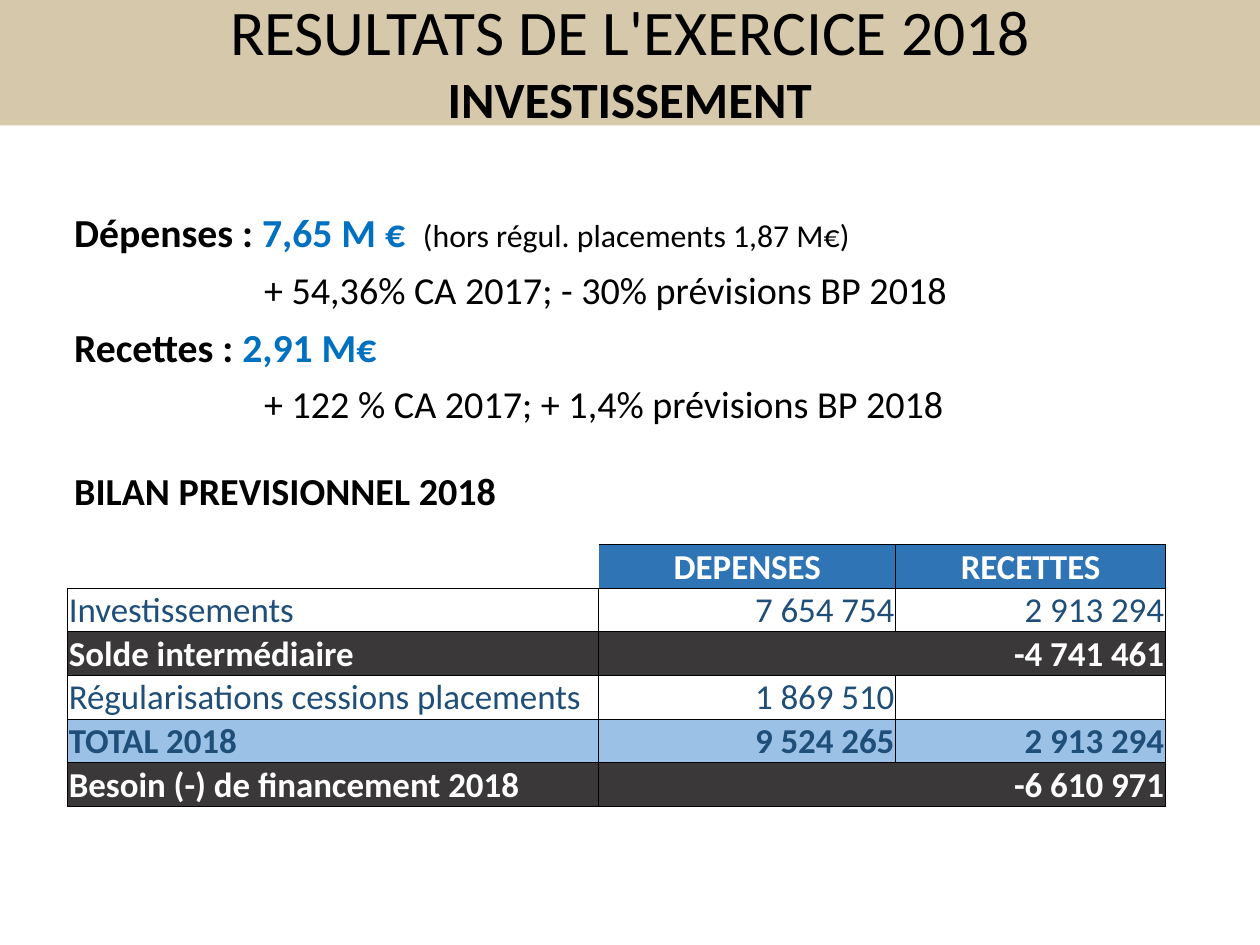
from lxml import etree
from pptx import Presentation
from pptx.dml.color import RGBColor
from pptx.enum import shapes, text
from pptx.oxml import ns
from pptx.util import Cm, Pt

BLACK, WHITE, SAND = "000000", "FFFFFF", "D6C8AB"
ACCENT, HEADER, NAVY = "0070C0", "2F75B5", "1F4E78"
DARK, LIGHT_BLUE = "3A3838", "9BC2E6"
LEFT, CENTER, RIGHT = text.PP_ALIGN.LEFT, text.PP_ALIGN.CENTER, text.PP_ALIGN.RIGHT


def color(hex_value):
    return RGBColor.from_string(hex_value)


def style(run, size, hex_value=BLACK, bold=False):
    run.font.name = "Calibri"
    run.font.size = Pt(size)
    run.font.bold = bold
    run.font.color.rgb = color(hex_value)


def add_run(paragraph, words, *formatting):
    run = paragraph.add_run()
    run.text = words
    style(run, *formatting)


def add_title(slide, left, top, width, height):
    # Banner behind the title
    title = slide.shapes.title
    banner = slide.shapes.add_shape(shapes.MSO_SHAPE.RECTANGLE, left, top, width, height)
    banner.shadow.inherit = False
    banner.fill.solid()
    banner.fill.fore_color.rgb = color(SAND)
    banner.line.fill.background()
    title.element.addprevious(banner.element)

    # Two-line title
    margin = Cm(1.4)
    title.left, title.top = left + margin, top
    title.width, title.height = width - 2 * margin, height - Cm(0.1)
    frame = title.text_frame
    frame.text = "RESULTATS DE L'EXERCICE 2018\vINVESTISSEMENT"
    frame.auto_size = text.MSO_AUTO_SIZE.NONE
    frame.vertical_anchor = text.MSO_ANCHOR.MIDDLE
    paragraph = frame.paragraphs[0]
    paragraph.alignment = CENTER
    paragraph.line_spacing = 1.0
    heading, subject = paragraph.runs
    style(heading, 40)
    style(subject, 32, BLACK, True)


def add_text_box(slide, left, top, width, height):
    frame = slide.shapes.add_textbox(left, top, width, height).text_frame
    frame.word_wrap = True
    return frame


def add_key_figures(slide, left, top, width, height):
    # Each line: indent in cm, then its runs
    lines = [
        (0, [("Dépenses : ", 25, BLACK, True), ("7,65 M €", 25, ACCENT, True),
             ("\t(hors régul. placements 1,87 M€)", 20)]),
        (4.22, [("+ 54,36% CA 2017; - 30% prévisions BP 2018", 24)]),
        (0, [("Recettes : ", 25, BLACK, True), ("2,91 M€", 25, ACCENT, True)]),
        (4.22, [("+ 122 % CA 2017; + 1,4% prévisions BP 2018", 24)]),
    ]
    frame = add_text_box(slide, left, top, width, height)
    for index, (indent, runs) in enumerate(lines):
        paragraph = frame.add_paragraph() if index else frame.paragraphs[0]
        properties = paragraph._p.get_or_add_pPr()
        properties.set("marL", str(Cm(indent)))
        if index == 0:
            tabs = etree.SubElement(properties, ns.qn("a:tabLst"))
            etree.SubElement(tabs, ns.qn("a:tab"), pos=str(Cm(7.75)), algn="l")
        paragraph.space_before = Pt(6.6 if index else 0)
        for run in runs:
            add_run(paragraph, *run)


def add_section_heading(slide, left, top, width, height):
    frame = add_text_box(slide, left, top, width, height)
    add_run(frame.paragraphs[0], "BILAN PREVISIONNEL 2018", 24, BLACK, True)


def set_borders(cell, visible_sides):
    properties = cell._tc.get_or_add_tcPr()
    for side in "LRTB":
        line = etree.SubElement(properties, ns.qn("a:ln" + side), w=str(Pt(0.5)))
        if side in visible_sides:
            fill = etree.SubElement(line, ns.qn("a:solidFill"))
            etree.SubElement(fill, ns.qn("a:srgbClr"), val=BLACK)
        else:
            etree.SubElement(line, ns.qn("a:noFill"))


def add_balance_table(slide, left, top, width, height):
    # Each row: fill, text colour, bold, cell texts
    rows = [
        (HEADER, WHITE, True, ["", "DEPENSES", "RECETTES"]),
        (WHITE, NAVY, False, ["Investissements", "7 654 754", "2 913 294"]),
        (DARK, WHITE, True, ["Solde intermédiaire", "-4 741 461"]),
        (WHITE, NAVY, False, ["Régularisations cessions placements", "1 869 510", ""]),
        (LIGHT_BLUE, NAVY, True, ["TOTAL 2018", "9 524 265", "2 913 294"]),
        (DARK, WHITE, True, ["Besoin (-) de financement 2018", "-6 610 971"]),
    ]
    table = slide.shapes.add_table(len(rows), 3, left, top, width, height).table
    for column, share in zip(table.columns, (4.65, 2.6, 2.36)):
        column.width = int(width * share / 9.61)
    for r, (fill, ink, bold, texts) in enumerate(rows):
        table.rows[r].height = int(height / len(rows))
        if len(texts) == 2:
            table.cell(r, 1).merge(table.cell(r, 2))
        for c in range(3):
            cell = table.cell(r, c)
            set_borders(cell, {(0, 0): "B", (0, 1): "RTB"}.get((r, c), "LRTB"))
            cell.margin_left = cell.margin_right = cell.margin_top = Cm(0.03)
            cell.margin_bottom = 0
            cell.vertical_anchor = text.MSO_ANCHOR.MIDDLE
            if (r, c) == (0, 0):
                cell.fill.background()
            else:
                cell.fill.solid()
                cell.fill.fore_color.rgb = color(fill)
            if c < len(texts) and texts[c]:
                paragraph = cell.text_frame.paragraphs[0]
                paragraph.alignment = CENTER if r == 0 else RIGHT if c else LEFT
                add_run(paragraph, texts[c], 22, ink, bold)


def main():
    presentation = Presentation()
    presentation.slide_width, presentation.slide_height = Cm(28), Cm(21)
    slide = presentation.slides.add_slide(presentation.slide_layouts[5])
    add_title(slide, 0, 0, presentation.slide_width, Cm(2.79))
    add_key_figures(slide, Cm(1.4), Cm(4.5), Cm(25.2), Cm(5.2))
    add_section_heading(slide, Cm(1.4), Cm(10.26), Cm(10.5), Cm(1.3))
    add_balance_table(slide, Cm(1.5), Cm(12.1), Cm(24.4), Cm(5.82))
    presentation.save("out.pptx")


if __name__ == "__main__":
    main()
